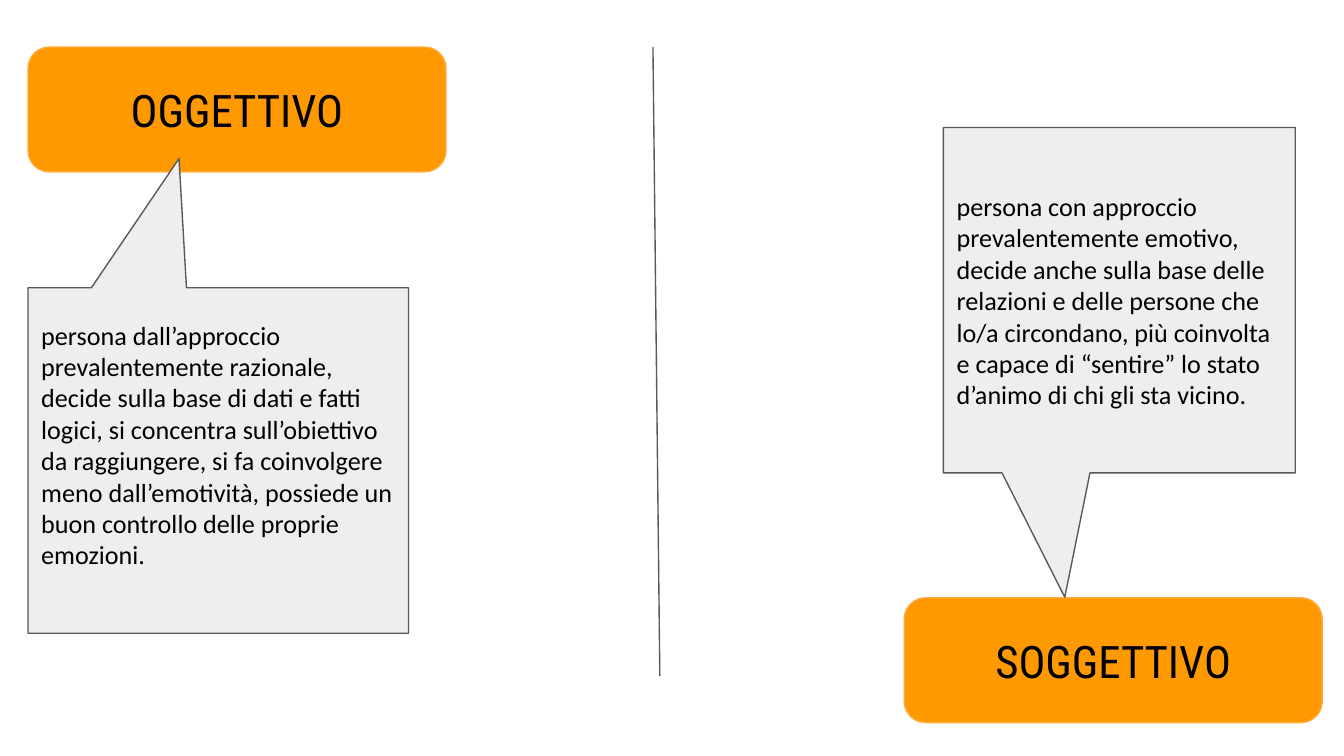
from lxml import etree
from pptx import Presentation
from pptx.dml.color import RGBColor
from pptx.enum.shapes import MSO_CONNECTOR, MSO_SHAPE
from pptx.enum.text import MSO_ANCHOR, PP_ALIGN
from pptx.oxml.ns import qn
from pptx.util import Cm, Pt

ROUNDED = MSO_SHAPE.ROUNDED_RECTANGLE
CALLOUT = MSO_SHAPE.ROUNDED_RECTANGULAR_CALLOUT
STRAIGHT = MSO_CONNECTOR.STRAIGHT
MIDDLE = MSO_ANCHOR.MIDDLE
LEFT, CENTER = PP_ALIGN.LEFT, PP_ALIGN.CENTER

ORANGE = RGBColor(0xFF, 0x99, 0x00)
LIGHT_ORANGE = RGBColor(0xFF, 0xAB, 0x40)
LIGHT_GREY = RGBColor(0xEE, 0xEE, 0xEE)
DARK_GREY = RGBColor(0x59, 0x59, 0x59)
BLACK = RGBColor(0x00, 0x00, 0x00)

INSET = 0.25
LINE_WIDTH = Pt(0.75)
LABEL_W, LABEL_H = 7.9, 2.36
CALLOUT_H = 6.53


def write_text(s, text, size=14, font="Calibri", align=LEFT, bottom=INSET):
    """Write one formatted paragraph, vertically centred in a shape."""
    tf = s.text_frame
    tf.word_wrap = True
    tf.vertical_anchor = MIDDLE
    tf.margin_left = tf.margin_right = tf.margin_top = Cm(INSET)
    tf.margin_bottom = Cm(bottom)
    p = tf.paragraphs[0]
    p.alignment = align
    r = p.add_run()
    r.text = text
    r.font.size = Pt(size)
    r.font.name = font
    r.font.color.rgb = BLACK


def add_box(slide, kind, box, fill, line, adjustments):
    """Add a filled, outlined shape in a box given in centimetres."""
    s = slide.shapes.add_shape(kind, *map(Cm, box))
    s.shadow.inherit = False
    s.fill.solid()
    s.fill.fore_color.rgb = fill
    s.line.color.rgb = line
    s.line.width = LINE_WIDTH
    for i, value in enumerate(adjustments):
        s.adjustments[i] = value
    return s


def add_label(slide, left, top, text):
    """Add an orange heading label."""
    box = (left, top, LABEL_W, LABEL_H)
    s = add_box(slide, ROUNDED, box, ORANGE, LIGHT_ORANGE, [0.17])
    write_text(s, text, size=24, font="Roboto Condensed", align=CENTER)


def add_callout(slide, left, top, width, pointer, text, bottom=INSET):
    """Add a grey description whose pointer reaches its label."""
    box = (left, top, width, CALLOUT_H)
    s = add_box(slide, CALLOUT, box, LIGHT_GREY, DARK_GREY, [*pointer, 0])
    write_text(s, text, bottom=bottom)


def add_objective(slide, left, top):
    """Place the objective label with its description below."""
    add_label(slide, left, top, "OGGETTIVO")
    add_callout(
        slide, left, top + 4.55, 7.19, (-0.103, -0.874),
        "persona dall’approccio prevalentemente razionale, decide sulla base "
        "di dati e fatti logici, si concentra sull’obiettivo da raggiungere, "
        "si fa coinvolgere meno dall’emotività, possiede un buon controllo "
        "delle proprie emozioni.", bottom=0.85)


def add_subjective(slide, left, top):
    """Place the subjective description with its label below."""
    add_label(slide, left, top + 8.89, "SOGGETTIVO")
    add_callout(
        slide, left + 0.74, top, 6.65, (-0.155, 0.86),
        "persona con approccio prevalentemente emotivo, decide anche sulla "
        "base delle relazioni e delle persone che lo/a circondano, più "
        "coinvolta e capace di “sentire” lo stato d’animo di chi gli sta "
        "vicino.")


def add_divider(slide, start, end):
    """Draw the thin line between the two halves."""
    s = slide.shapes.add_connector(STRAIGHT, *map(Cm, start + end))
    s.line.color.rgb = DARK_GREY
    s.line.width = LINE_WIDTH
    etree.SubElement(s._element.spPr, qn("a:effectLst"))


def main():
    """Build and save the slide."""
    prs = Presentation()
    prs.slide_width, prs.slide_height = Cm(25.4), Cm(14.29)
    slide = prs.slides.add_slide(prs.slide_layouts[6])
    add_objective(slide, 0.53, 0.89)
    add_subjective(slide, 17.09, 2.41)
    add_divider(slide, (12.34, 0.89), (12.47, 12.78))
    prs.save("out.pptx")


if __name__ == "__main__":
    main()
